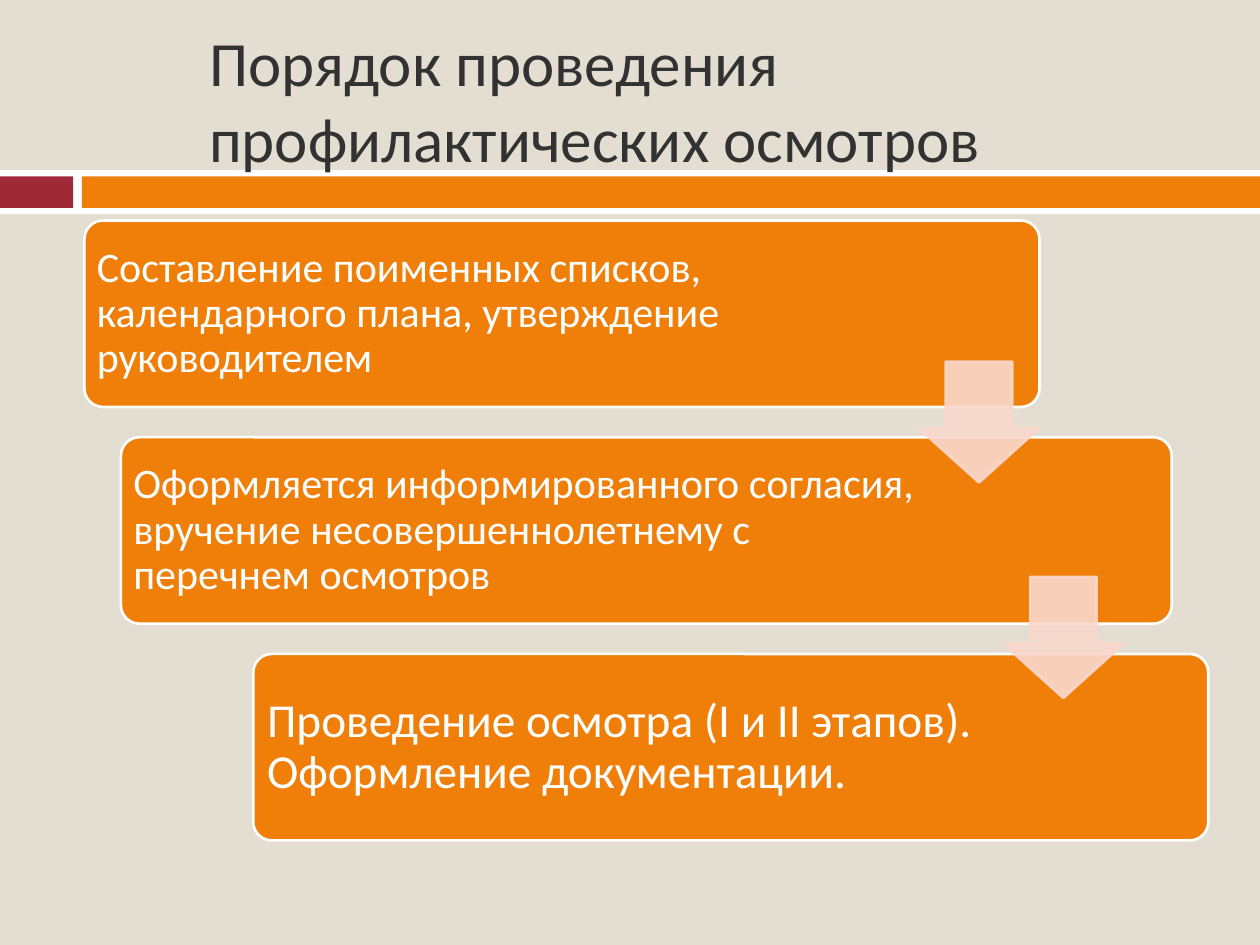
from lxml import etree
from pptx import Presentation
from pptx.dml.color import RGBColor
from pptx.enum.shapes import MSO_SHAPE
from pptx.enum.text import MSO_ANCHOR, MSO_AUTO_SIZE, PP_ALIGN
from pptx.oxml.ns import qn
from pptx.util import Inches, Pt

RECTANGLE = MSO_SHAPE.RECTANGLE
ROUNDED = MSO_SHAPE.ROUNDED_RECTANGLE
DOWN_ARROW = MSO_SHAPE.DOWN_ARROW
MIDDLE = MSO_ANCHOR.MIDDLE
LEFT = PP_ALIGN.LEFT
NO_AUTOFIT = MSO_AUTO_SIZE.NONE

WIDTH, HEIGHT = 10, 7.5
ORANGE, RED, WHITE = "F07F09", "9F2936", "FFFFFF"
SAND, CHARCOAL, PINK = "E3DED1", "323232", "F9D8CC"

STEP_TOP, STEP_PITCH, STEP_HEIGHT = 1.75, 1.72, 1.48
ARROW_SIZE = 0.96
# left, card width, text width, text size, inset, wording
STEPS = [
    (0.67, 7.58, 6.07, 24, 0.1,
     "Составление поименных списков, календарного плана, утверждение руководителем"),
    (0.96, 8.34, 6.55, 24, 0.1,
     "Оформляется информированного согласия, вручение несовершеннолетнему с перечнем осмотров"),
    (2.01, 7.58, 5.95, 27, 0.11,
     "Проведение осмотра (I и II этапов). Оформление документации."),
]
ARROW_LEFTS = [7.29, 7.96]


def paint(color_format, color):
    color_format.rgb = RGBColor.from_string(color)


def set_opacity(fill_element, percent):
    for color in fill_element.iter(qn("a:srgbClr")):
        etree.SubElement(color, qn("a:alpha")).set("val", str(percent * 1000))


def write_text(box, text, size, color, inset=None, line_spacing=None, space_after=0):
    frame = box.text_frame
    frame.word_wrap = True
    frame.auto_size = NO_AUTOFIT
    frame.vertical_anchor = MIDDLE
    if inset is not None:
        frame.margin_left = frame.margin_right = Inches(inset)
        frame.margin_top = frame.margin_bottom = Inches(inset)
    para = frame.paragraphs[0]
    para.alignment = LEFT
    para.space_after = Pt(space_after)
    if line_spacing:
        para.line_spacing = line_spacing
    span = para.add_run()
    span.text = text
    span.font.name = "Calibri"
    span.font.size = Pt(size)
    paint(span.font.color, color)


def add_block(page, kind, place, fill, line=None, adjustments=()):
    block = page.shapes.add_shape(kind, *map(Inches, place))
    block.shadow.inherit = False
    block.fill.solid()
    paint(block.fill.fore_color, fill)
    if line:
        paint(block.line.color, line)
        block.line.width = Pt(1.5)
    else:
        block.line.fill.background()
    for index, value in enumerate(adjustments):
        block.adjustments[index] = value
    return block


def add_header_band(page):
    add_block(page, RECTANGLE, (0, 1.35, WIDTH, 0.35), WHITE)
    add_block(page, RECTANGLE, (0, 1.4, 0.58, 0.25), RED)
    add_block(page, RECTANGLE, (0.65, 1.4, WIDTH - 0.65, 0.25), ORANGE)


def add_title(page, text):
    """Fill the title placeholder and bring it in front of the band."""
    title = page.shapes.title
    title.left, title.top, title.width, title.height = map(Inches, (1.56, 0.25, 8.02, 1.08))
    write_text(title, text, 36, CHARCOAL)
    title.element.getparent().append(title.element)


def add_step(page, row, left, width, text_width, size, inset, text):
    top = STEP_TOP + row * STEP_PITCH
    add_block(page, ROUNDED, (left, top, width, STEP_HEIGHT), ORANGE, WHITE, [0.1])
    box = page.shapes.add_textbox(*map(Inches, (left, top, text_width, STEP_HEIGHT)))
    write_text(box, text, size, WHITE, inset=inset, line_spacing=0.9,
               space_after=size * 0.35)


def add_arrow(page, row, left):
    top = 2.87 + row * (STEP_PITCH - 0.01)
    arrow = add_block(page, DOWN_ARROW, (left, top, ARROW_SIZE, ARROW_SIZE),
                      PINK, PINK, [0.55, 0.45])
    # The proportions run head length first in the public adjustments list.
    arrow.adjustments[0], arrow.adjustments[1] = 0.55, 0.45
    set_opacity(arrow.element.spPr, 90)


def main():
    deck = Presentation()
    deck.slide_width, deck.slide_height = Inches(WIDTH), Inches(HEIGHT)
    page = deck.slides.add_slide(deck.slide_layouts[5])
    page.background.fill.solid()
    paint(page.background.fill.fore_color, SAND)
    add_header_band(page)
    add_title(page, "Порядок проведения профилактических осмотров")
    for row, step in enumerate(STEPS):
        add_step(page, row, *step)
    for row, left in enumerate(ARROW_LEFTS):
        add_arrow(page, row, left)
    deck.save("out.pptx")


if __name__ == "__main__":
    main()
